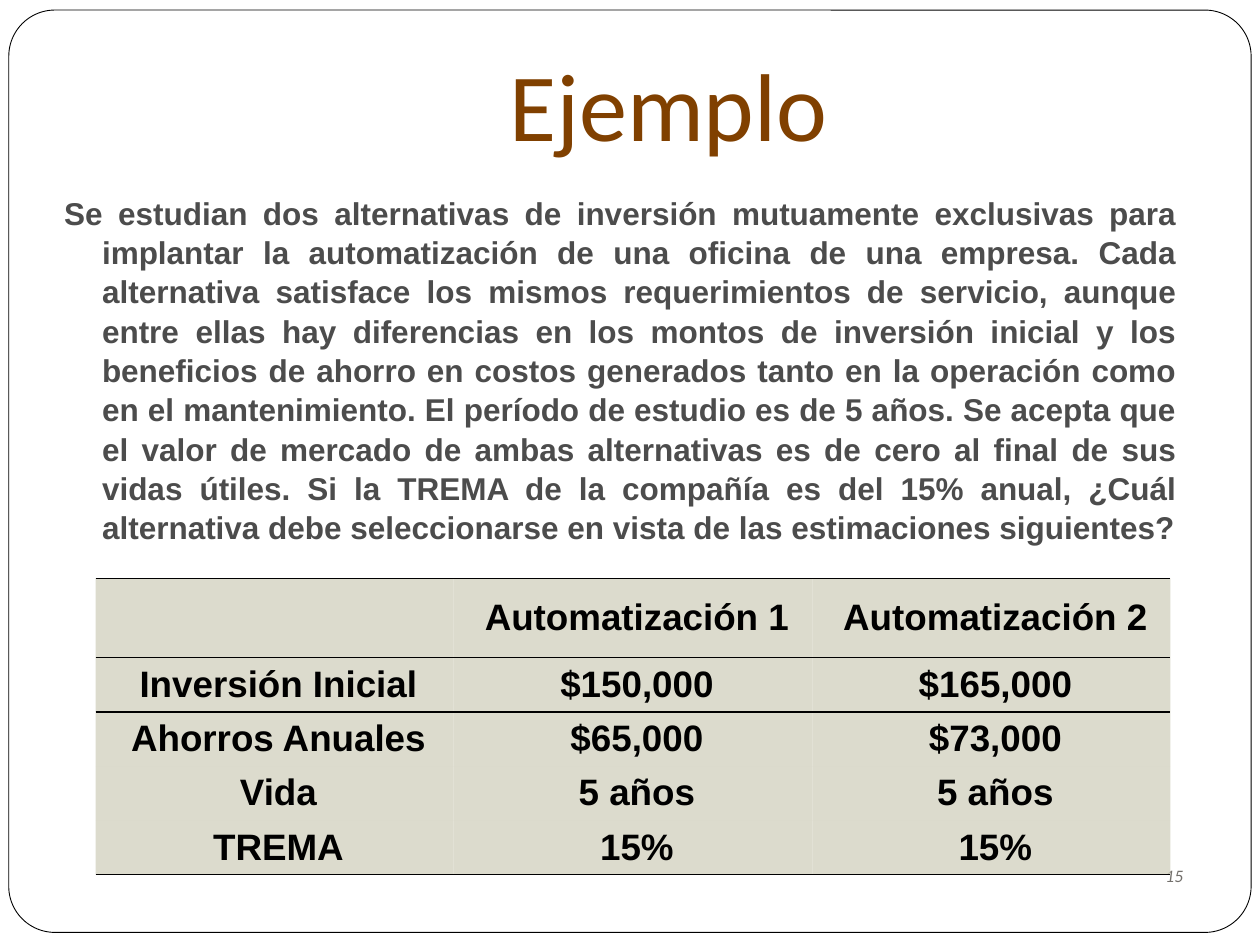
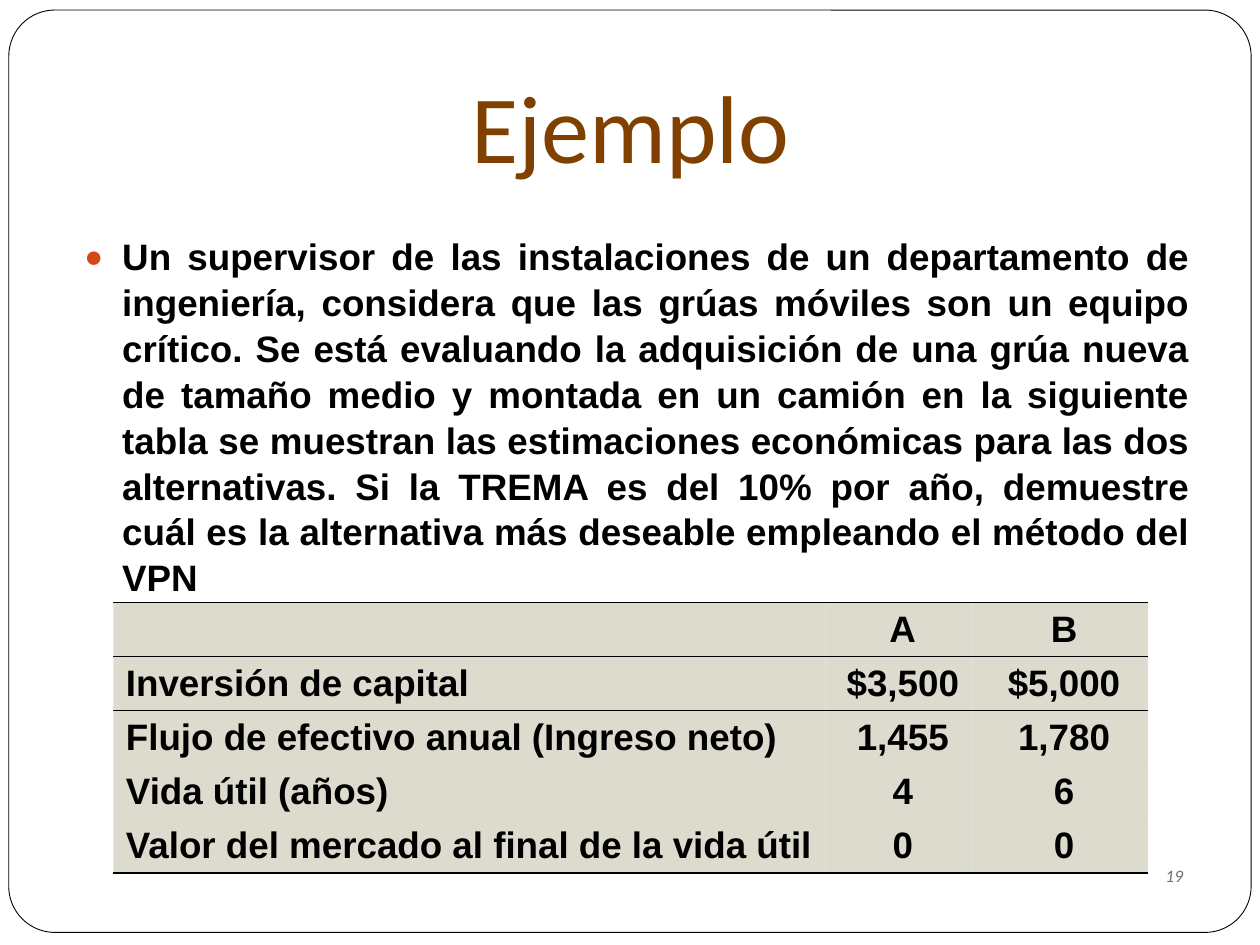
from dataclasses import dataclass

from lxml import etree
from pptx import Presentation
from pptx.dml.color import RGBColor
from pptx.enum import shapes as shp, text as txt
from pptx.oxml import ns
from pptx.util import Inches, Pt

# Shared look
BLACK = RGBColor(0x00, 0x00, 0x00)
WHITE = RGBColor(0xFF, 0xFF, 0xFF)
BROWN = RGBColor(0x80, 0x40, 0x00)
GREY = RGBColor(0x4C, 0x4C, 0x4C)
STONE = RGBColor(0x73, 0x70, 0x6C)
SAND = RGBColor(0xD4, 0xD3, 0xC1)
RUST = RGBColor(0xD3, 0x48, 0x17)
PLAIN = "{2D5ABB26-0587-4C30-8999-92F81FD0307C}"  # table style without grid
LEFT, MID, RIGHT, FULL = (txt.PP_ALIGN.LEFT, txt.PP_ALIGN.CENTER,
                          txt.PP_ALIGN.RIGHT, txt.PP_ALIGN.JUSTIFY)


@dataclass
class Box:
    x: float
    y: float
    w: float
    h: float

    def inches(self) -> list:
        return [Inches(v) for v in (self.x, self.y, self.w, self.h)]


@dataclass
class Body:
    box: Box
    words: str
    size: float
    color: RGBColor
    before: float
    bullet: bool = False


@dataclass
class Grid:
    box: Box
    cols: list
    head: float
    rows: list
    first: int = MID  # alignment of the row labels


@dataclass
class Page:
    number: int
    title: Box
    body: Body
    grid: Grid


def sub(parent, tag: str, **attrs):
    return etree.SubElement(parent, ns.qn(tag), **attrs)


def write(frame, words: str, *, size: float, color: RGBColor, font="Arial",
          bold=False, italic=False, align=MID, inset=0.0, left=0.0, first=0.0,
          before=0.0, pitch=1.0, bullet=False) -> None:
    """Put one formatted paragraph into a text frame."""
    frame.word_wrap = True
    frame.vertical_anchor = txt.MSO_ANCHOR.MIDDLE
    frame.margin_left = frame.margin_right = Inches(inset)
    frame.margin_top = frame.margin_bottom = Inches(inset)
    para = frame.paragraphs[0]
    para.alignment, para.line_spacing = align, pitch
    para.space_before = Pt(before)
    run = para.add_run()
    run.text = words
    face = run.font
    face.name, face.size, face.bold, face.italic = font, Pt(size), bold, italic
    face.color.rgb = color
    props = para._p.get_or_add_pPr()
    props.set("marL", str(Inches(left)))
    props.set("indent", str(Inches(first)))
    if bullet:
        sub(sub(props, "a:buClr"), "a:srgbClr", val=str(RUST))
        sub(props, "a:buSzPct", val="85000")
        sub(props, "a:buChar", char="●")
    else:
        sub(props, "a:buNone")


def place(shape, box: Box) -> None:
    shape.left, shape.top, shape.width, shape.height = box.inches()


def back(slide, number: int) -> None:
    """Rounded frame and page number, behind the placeholders."""
    card = slide.shapes.add_shape(shp.MSO_SHAPE.ROUNDED_RECTANGLE,
                                  *Box(0.07, 0.08, 9.86, 7.32).inches())
    card.adjustments[0] = 0.05
    card.shadow.inherit = False
    card.fill.solid()
    card.fill.fore_color.rgb = WHITE
    card.line.color.rgb = BLACK
    card.line.width = Pt(0.5)
    note = slide.shapes.add_textbox(*Box(7.33, 6.83, 2.1, 0.24).inches())
    write(note.text_frame, str(number), size=10, color=STONE, font="Calibri",
          italic=True, align=RIGHT, inset=0.04)
    for item in (card, note):
        slide.shapes.title.element.addprevious(item.element)


def rule(cell, tag: str) -> None:
    """Black border on one side of a cell."""
    line = etree.Element(ns.qn(tag), w=str(Pt(1)))
    sub(sub(line, "a:solidFill"), "a:srgbClr", val=str(BLACK))
    cell._tc.get_or_add_tcPr().insert(0, line)


def draw(slide, grid: Grid) -> None:
    """Sand table with rules above and below its head and at its foot."""
    last = len(grid.rows) - 1
    frame = slide.shapes.add_table(last + 1, len(grid.cols), *grid.box.inches())
    frame.element.find(".//" + ns.qn("a:tableStyleId")).text = PLAIN
    table = frame.table
    table.first_row = table.horz_banding = False
    for col, width in zip(table.columns, grid.cols):
        col.width = Inches(width)
    for r, row in enumerate(grid.rows):
        table.rows[r].height = Inches(0.43 if r else grid.head)
        for c, words in enumerate(row):
            cell = table.cell(r, c)
            cell.fill.solid()
            cell.fill.fore_color.rgb = SAND
            tone = cell._tc.find(".//" + ns.qn("a:srgbClr"))
            sub(tone, "a:alpha", val="80000")
            if r in (0, last):
                rule(cell, "a:lnB")
            if r in (0, 1):
                rule(cell, "a:lnT")
            cell.vertical_anchor = txt.MSO_ANCHOR.MIDDLE
            cell.margin_left = cell.margin_right = Inches(0.04)
            cell.margin_top = cell.margin_bottom = Inches(0.04)
            if words:
                fill_cell(cell, words, MID if c else grid.first)


def fill_cell(cell, words: str, align: int) -> None:
    para = cell.text_frame.paragraphs[0]
    para.alignment = align
    run = para.add_run()
    run.text = words
    run.font.name, run.font.size, run.font.bold = "Arial", Pt(21), True
    run.font.color.rgb = BLACK
    props = para._p.get_or_add_pPr()
    props.set("marL", str(Inches(0.76)))
    props.set("indent", str(Inches(-0.7)))


def build(deck, page: Page) -> None:
    slide = deck.slides.add_slide(deck.slide_layouts[1])
    title, body = slide.shapes.title, slide.placeholders[1]
    back(slide, page.number)
    place(title, page.title)
    write(title.text_frame, "Ejemplo", size=55, color=BROWN, font="Calibri")
    part = page.body
    place(body, part.box)
    write(body.text_frame, part.words, size=part.size, color=part.color,
          bold=True, align=FULL, left=0.3, first=-0.3, before=part.before,
          pitch=1.04, bullet=part.bullet)
    for item in (title, body):
        item.text_frame.auto_size = txt.MSO_AUTO_SIZE.NONE
    draw(slide, page.grid)


# Content
PAGES = [
    Page(
        15, Box(1.28, 0.18, 8.05, 1.27),
        Body(Box(0.51, 1.47, 8.83, 2.92),
             "Se estudian dos alternativas de inversión mutuamente exclusivas "
             "para implantar la automatización de una oficina de una empresa. "
             "Cada alternativa satisface los mismos requerimientos de "
             "servicio, aunque entre ellas hay diferencias en los montos de "
             "inversión inicial y los beneficios de ahorro en costos generados "
             "tanto en la operación como en el mantenimiento. El período de "
             "estudio es de 5 años. Se acepta que el valor de mercado de ambas "
             "alternativas es de cero al final de sus vidas útiles. Si la "
             "TREMA de la compañía es del 15% anual, ¿Cuál alternativa debe "
             "seleccionarse en vista de las estimaciones siguientes?",
             18, GREY, 19.7),
        Grid(Box(0.76, 4.59, 8.53, 2.35), [2.84, 2.85, 2.84], 0.63, [
            ("", "Automatización 1", "Automatización 2"),
            ("Inversión Inicial", "$150,000", "$165,000"),
            ("Ahorros Anuales", "$65,000", "$73,000"),
            ("Vida", "5 años", "5 años"),
            ("TREMA", "15%", "15%"),
        ])),
    Page(
        19, Box(0.98, 0.36, 8.05, 1.27),
        Body(Box(0.67, 1.78, 8.77, 3.04),
             "Un supervisor de las instalaciones de un departamento de "
             "ingeniería, considera que las grúas móviles son un equipo "
             "crítico. Se está evaluando la adquisición de una grúa nueva de "
             "tamaño medio y montada en un camión en la siguiente tabla se "
             "muestran las estimaciones económicas para las dos alternativas. "
             "Si la TREMA es del 10% por año, demuestre cuál es la alternativa "
             "más deseable empleando el método del VPN",
             21, BLACK, 5.8, bullet=True),
        Grid(Box(0.9, 4.78, 8.21, 2.15), [5.65, 1.17, 1.39], 0.43, [
            ("", "A", "B"),
            ("Inversión de capital", "$3,500", "$5,000"),
            ("Flujo de efectivo anual (Ingreso neto)", "1,455", "1,780"),
            ("Vida útil (años)", "4", "6"),
            ("Valor del mercado al final de la vida útil", "0", "0"),
        ], FULL)),
]


def main() -> None:
    deck = Presentation()
    deck.slide_width, deck.slide_height = Inches(10), Inches(7.5)
    for page in PAGES:
        build(deck, page)
    deck.save("out.pptx")


if __name__ == "__main__":
    main()
